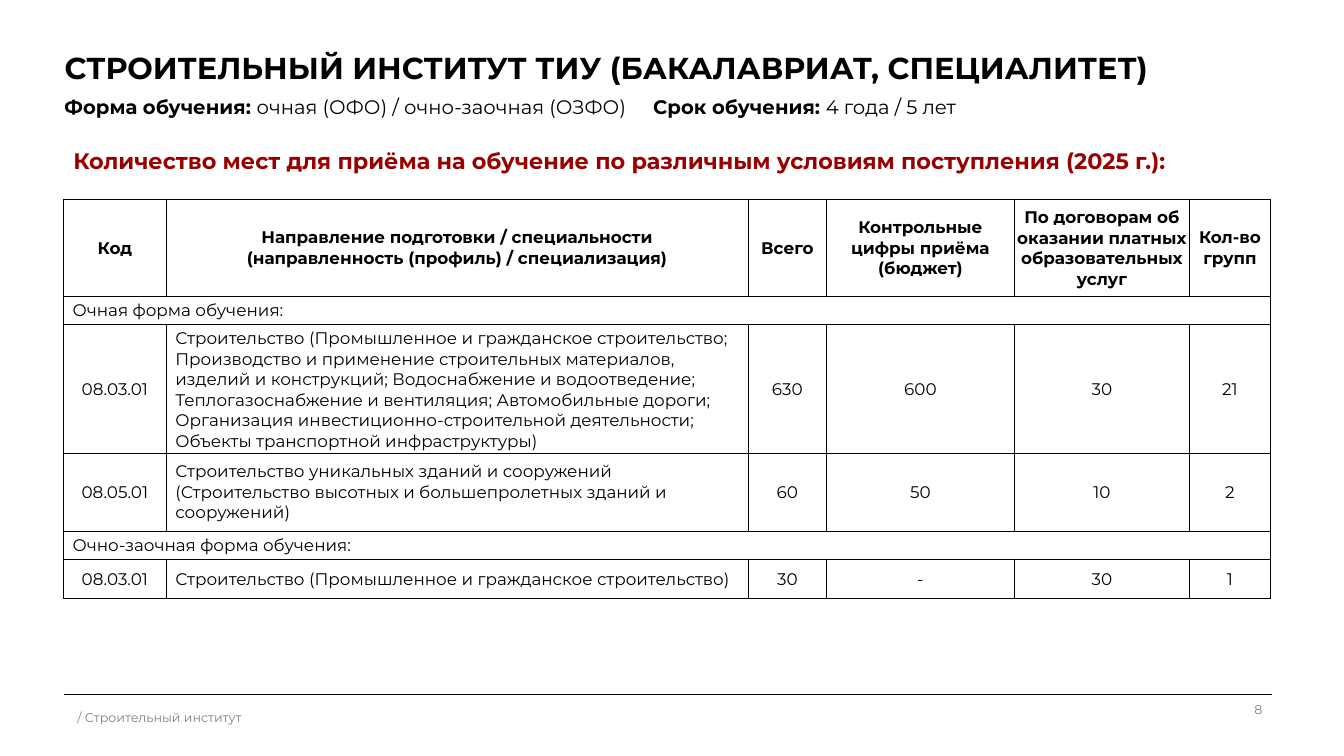
from dataclasses import dataclass

from lxml.etree import SubElement
from pptx import Presentation
from pptx.dml.color import RGBColor
from pptx.enum.shapes import MSO_CONNECTOR
from pptx.enum.text import MSO_ANCHOR, MSO_AUTO_SIZE, PP_ALIGN
from pptx.oxml import parse_xml
from pptx.oxml.ns import nsdecls, qn
from pptx.util import Pt

EMU_PER_PX = 9144


@dataclass(frozen=True)
class Theme:
    font: str = "Montserrat"
    ink: str = "000000"
    accent: str = "990000"
    muted: str = "808080"
    title: float = 21.6
    heading: float = 16
    subtitle: float = 14
    body: float = 12
    footer: float = 9
    rule: float = 0.5
    border: float = 0.75


THEME = Theme()

COLUMN_WIDTHS = [102, 577, 78, 186, 174, 80]
ROW_HEIGHTS = [95, 28, 128, 77, 28, 39]
PROFILE_COLUMN = 1
PLACES = [
    ["Код",
     "Направление подготовки / специальности\n(направленность (профиль) / специализация)",
     "Всего", "Контрольные цифры приёма (бюджет)",
     "По договорам об оказании платных образовательных услуг", "Кол-во групп"],
    ["Очная форма обучения:"],
    ["08.03.01",
     "Строительство (Промышленное и гражданское строительство; "
     "Производство и применение строительных материалов, изделий и конструкций; "
     "Водоснабжение и водоотведение; Теплогазоснабжение и вентиляция; "
     "Автомобильные дороги; Организация инвестиционно-строительной деятельности; "
     "Объекты транспортной инфраструктуры)",
     "630", "600", "30", "21"],
    ["08.05.01",
     "Строительство уникальных зданий и сооружений "
     "(Строительство высотных и большепролетных зданий и сооружений)",
     "60", "50", "10", "2"],
    ["Очно-заочная форма обучения:"],
    ["08.03.01", "Строительство (Промышленное и гражданское строительство)",
     "30", "-", "30", "1"],
]


def px(value):
    return round(value * EMU_PER_PX)


def add_span(para, text, size=THEME.body, color=THEME.ink, bold=False):
    span = para.add_run()
    span.text = text
    span.font.name = THEME.font
    span.font.size = Pt(size)
    span.font.bold = bold
    span.font.color.rgb = RGBColor.from_string(color)


def write(frame, text, align=PP_ALIGN.LEFT, indent=0, **style):
    """Fill a text frame, one paragraph for each line of text."""
    for index, line in enumerate(text.split("\n")):
        para = frame.paragraphs[0] if index == 0 else frame.add_paragraph()
        para.alignment = align
        if indent:
            para._p.get_or_add_pPr().set("marL", str(px(indent)))
        add_span(para, line, **style)


def add_box(page, left, top, width, height, anchor=MSO_ANCHOR.TOP):
    box = page.shapes.add_textbox(px(left), px(top), px(width), px(height))
    frame = box.text_frame
    frame.word_wrap = True
    frame.vertical_anchor = anchor
    return frame


def add_title(page, text):
    title = page.shapes.title
    title.left, title.top, title.width, title.height = map(px, (54, 50, 1208, 39))
    frame = title.text_frame
    frame.auto_size = MSO_AUTO_SIZE.NONE
    frame.vertical_anchor = MSO_ANCHOR.MIDDLE
    write(frame, text, size=THEME.title, bold=True)
    frame.paragraphs[0].line_spacing = 0.9


def add_subtitle(page, facts, tab):
    """Write label and value pairs on one line, parted by a tab stop."""
    para = add_box(page, 54, 89, 1208, 34).paragraphs[0]
    tabs = SubElement(para._p.get_or_add_pPr(), qn("a:tabLst"))
    SubElement(tabs, qn("a:tab"), pos=str(px(tab)), algn="l")
    for index, (label, value) in enumerate(facts):
        lead = "\t" if index else ""
        add_span(para, f"{lead}{label} ", size=THEME.subtitle, bold=True)
        add_span(para, value, size=THEME.subtitle)


def add_borders(cell):
    properties = cell._tc.get_or_add_tcPr()
    for index, side in enumerate(("lnL", "lnR", "lnT", "lnB")):
        properties.insert(index, parse_xml(
            f'<a:{side} {nsdecls("a")} w="{Pt(THEME.border)}"><a:solidFill>'
            f'<a:srgbClr val="{THEME.ink}"/></a:solidFill></a:{side}>'))


def format_cell(cell, padding):
    cell.fill.background()
    add_borders(cell)
    cell.vertical_anchor = MSO_ANCHOR.MIDDLE
    cell.margin_left = cell.margin_right = px(1)
    cell.margin_top = cell.margin_bottom = px(padding)


def add_places_table(page, left, top):
    table = page.shapes.add_table(
        len(ROW_HEIGHTS), len(COLUMN_WIDTHS), px(left), px(top),
        px(sum(COLUMN_WIDTHS)), px(sum(ROW_HEIGHTS))).table
    table.horz_banding = False
    for column, width in zip(table.columns, COLUMN_WIDTHS):
        column.width = px(width)
    for row_index, (row, height, texts) in enumerate(zip(table.rows, ROW_HEIGHTS, PLACES)):
        row.height = px(height)
        header, section = row_index == 0, len(texts) == 1
        for cell in row.cells:
            format_cell(cell, padding=8 if header else 4)
        if section:
            row.cells[0].merge(row.cells[len(COLUMN_WIDTHS) - 1])
        for column_index, text in enumerate(texts):
            at_left = section or (column_index == PROFILE_COLUMN and not header)
            write(row.cells[column_index].text_frame, text, bold=header,
                  align=PP_ALIGN.LEFT if at_left else PP_ALIGN.CENTER,
                  indent=8 if at_left else 0)


def add_rule(page, left, right, y):
    rule = page.shapes.add_connector(
        MSO_CONNECTOR.STRAIGHT, px(left), px(y), px(right), px(y))
    rule.line.color.rgb = RGBColor.from_string(THEME.ink)
    rule.line.width = Pt(THEME.rule)
    SubElement(rule._element.spPr, qn("a:effectLst"))


def add_footer(page, text, number):
    style = {"size": THEME.footer, "color": THEME.muted}
    add_rule(page, 63, 1262, 689)
    write(add_box(page, 67, 692, 684, 40, anchor=MSO_ANCHOR.MIDDLE), text, **style)
    write(add_box(page, 962, 691, 300, 36), number, align=PP_ALIGN.RIGHT, **style)


def main():
    deck = Presentation()
    deck.slide_width, deck.slide_height = px(1333), px(750)
    page = deck.slides.add_slide(deck.slide_layouts[5])
    add_title(page, "СТРОИТЕЛЬНЫЙ ИНСТИТУТ ТИУ (БАКАЛАВРИАТ, СПЕЦИАЛИТЕТ)")
    add_subtitle(page, [("Форма обучения:", "очная (ОФО) / очно-заочная (ОЗФО)"),
                        ("Срок обучения:", "4 года / 5 лет")], tab=584)
    write(add_box(page, 63, 141, 1197, 37),
          "Количество мест для приёма на обучение по различным условиям поступления (2025 г.):",
          size=THEME.heading, color=THEME.accent, bold=True)
    add_places_table(page, 63, 198)
    add_footer(page, "/ Строительный институт", "8")
    deck.save("out.pptx")


if __name__ == "__main__":
    main()
